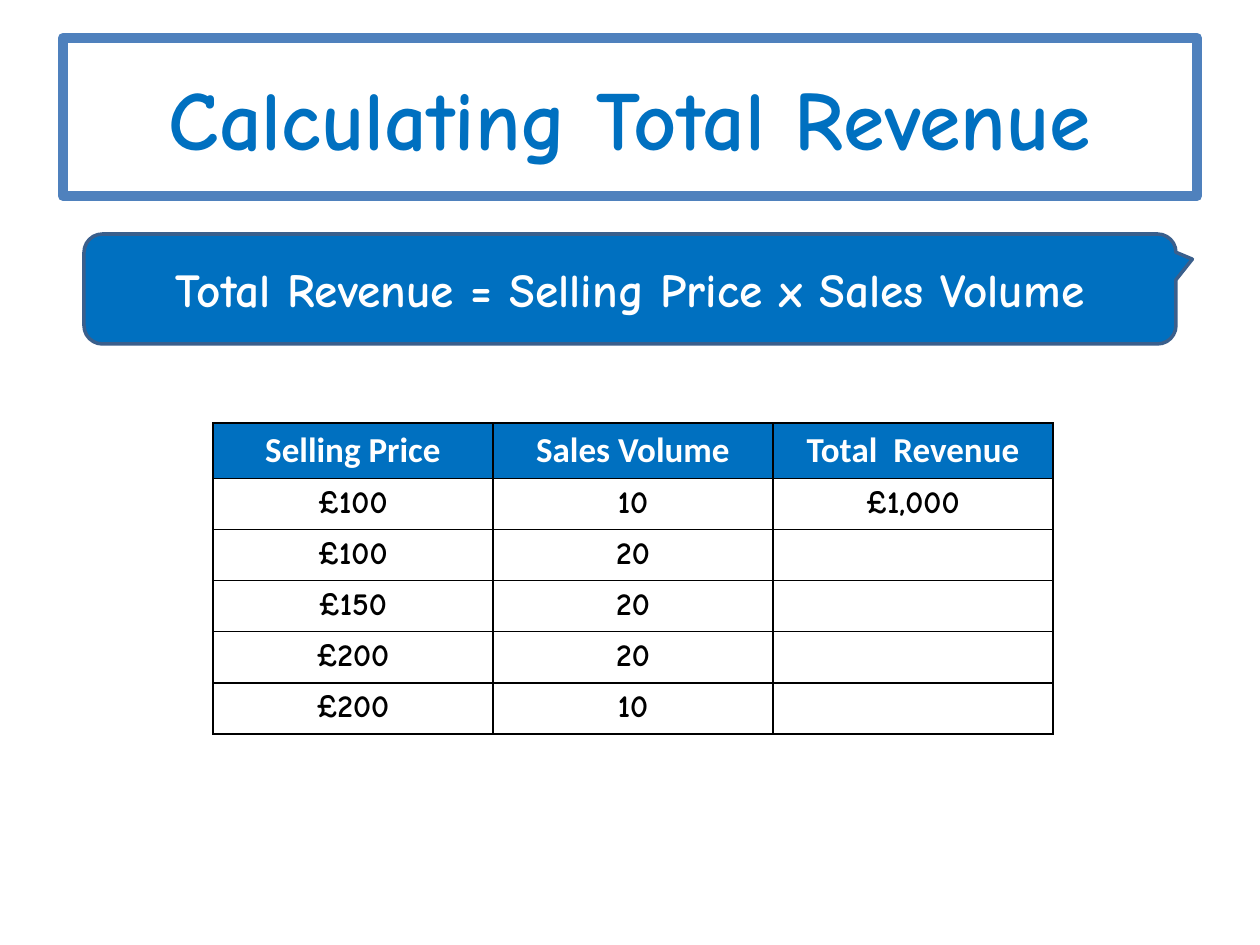
from lxml import etree
from pptx import Presentation
from pptx.dml.color import RGBColor
from pptx.enum.shapes import MSO_SHAPE
from pptx.enum.text import MSO_ANCHOR, MSO_AUTO_SIZE, PP_ALIGN
from pptx.oxml.ns import qn
from pptx.util import Emu, Pt

CALLOUT = MSO_SHAPE.ROUNDED_RECTANGULAR_CALLOUT
CENTER = PP_ALIGN.CENTER
MIDDLE = MSO_ANCHOR.MIDDLE
NO_AUTOFIT = MSO_AUTO_SIZE.NONE
TITLE_ONLY = 5

COLORS = {
    "white": "FFFFFF",
    "black": "000000",
    "blue": "0070C0",
    "frame": "4F81BD",
    "callout_line": "3A5F8C",
}
HAND_FONT = "Comic Neue"
HEADER_FONT = "Calibri"


def px(length):
    return Emu(round(length * 914400 / 126))


def color(name):
    return RGBColor.from_string(COLORS[name])


class SlideBuilder:
    def __init__(self, slide):
        self.slide = slide

    def paint(self, shape, fill, line, width):
        shape.fill.solid()
        shape.fill.fore_color.rgb = color(fill)
        shape.line.color.rgb = color(line)
        shape.line.width = Pt(width)

    def set_text(self, text_frame, text, size, text_color, font=HAND_FONT):
        text_frame.text = text
        paragraph = text_frame.paragraphs[0]
        paragraph.alignment = CENTER
        for run in paragraph.runs:
            run.font.name = font
            run.font.size = Pt(size)
            run.font.bold = True
            run.font.color.rgb = color(text_color)

    def title(self, text, left, top, width, height):
        title = self.slide.shapes.title
        title.left, title.top = px(left), px(top)
        title.width, title.height = px(width), px(height)
        self.paint(title, "white", "frame", 6)
        title.text_frame.auto_size = NO_AUTOFIT
        title.text_frame.vertical_anchor = MIDDLE
        self.set_text(title.text_frame, text, 48, "blue")

    def callout(self, text, left, top, width, height, adjustments):
        shape = self.slide.shapes.add_shape(
            CALLOUT, px(left), px(top), px(width), px(height))
        shape.shadow.inherit = False
        for index, value in enumerate(adjustments):
            shape.adjustments[index] = value
        self.paint(shape, "blue", "callout_line", 2)
        shape.text_frame.word_wrap = True
        shape.text_frame.vertical_anchor = MIDDLE
        self.set_text(shape.text_frame, text, 27, "white")

    def cell_borders(self, cell):
        properties = cell._tc.get_or_add_tcPr()
        for index, side in enumerate(("lnL", "lnR", "lnT", "lnB")):
            border = etree.Element(qn(f"a:{side}"), w=str(Pt(1)))
            fill = etree.SubElement(border, qn("a:solidFill"))
            etree.SubElement(fill, qn("a:srgbClr"), val=COLORS["black"])
            properties.insert(index, border)

    def table(self, rows, left, top, column_width, row_height):
        row_count, column_count = len(rows), len(rows[0])
        table = self.slide.shapes.add_table(
            row_count, column_count, px(left), px(top),
            px(column_width * column_count), px(row_height * row_count)).table
        for column in table.columns:
            column.width = px(column_width)
        for row_index, values in enumerate(rows):
            table.rows[row_index].height = px(row_height)
            is_header = row_index == 0
            for column_index, text in enumerate(values):
                cell = table.cell(row_index, column_index)
                cell.fill.solid()
                cell.fill.fore_color.rgb = color("blue" if is_header else "white")
                self.cell_borders(cell)
                if is_header:
                    self.set_text(cell.text_frame, text, 20, "white", HEADER_FONT)
                elif text:
                    self.set_text(cell.text_frame, text, 18, "black")


def main():
    presentation = Presentation()
    presentation.slide_width, presentation.slide_height = px(1260), px(945)
    slide = presentation.slides.add_slide(presentation.slide_layouts[TITLE_ONLY])
    builder = SlideBuilder(slide)

    # Heading and formula
    builder.title("Calculating Total Revenue", 63, 38, 1134, 158)
    builder.callout("Total Revenue = Selling Price x Sales Volume",
                    84, 234, 1092, 110, (0.515, -0.271, 0.167))

    # Exercise table, with revenue left to fill in
    builder.table([
        ("Selling Price", "Sales Volume", "Total  Revenue"),
        ("£100", "10", "£1,000"),
        ("£100", "20", ""),
        ("£150", "20", ""),
        ("£200", "20", ""),
        ("£200", "10", ""),
    ], 213, 423, 280, 51)

    presentation.save("out.pptx")


if __name__ == "__main__":
    main()
